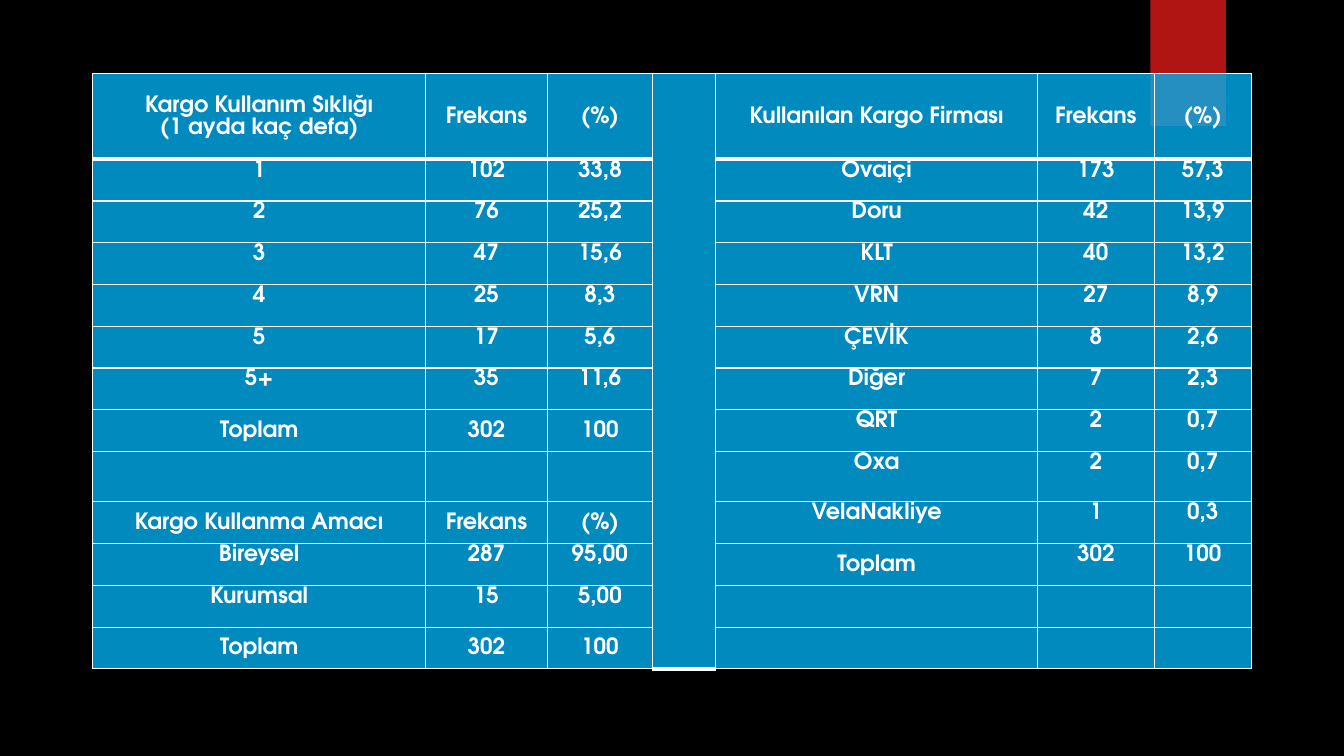
import pptx
import pptx.dml.color
import pptx.enum.shapes
import pptx.enum.text
import pptx.oxml
import pptx.oxml.ns
import pptx.util
from pptx.util import Inches

FONT = "TeX Gyre Adventor"
WHITE = "FFFFFF"
COLUMN_WIDTHS = [3.3, 1.21, 1.04, 0.63, 3.19, 1.16, 0.96]
TABLE_HEIGHT, HEADER_HEIGHT, GAP_HEIGHT = 5.91, 0.85, 0.5
GAP_ROW, GAP_COLUMN = 8, 3
USAGE = [
    ("Kargo Kullanım Sıklığı\n(1 ayda kaç defa)", "Frekans", "(%)"),
    ("1", "102", "33,8"),
    ("2", "76", "25,2"),
    ("3", "47", "15,6"),
    ("4", "25", "8,3"),
    ("5", "17", "5,6"),
    ("5+", "35", "11,6"),
    ("Toplam", "302", "100"),
    ("", "", ""),
    ("Kargo Kullanma Amacı", "Frekans", "(%)"),
    ("Bireysel", "287", "95,00"),
    ("Kurumsal", "15", "5,00"),
    ("Toplam", "302", "100"),
]
COMPANIES = [
    ("Kullanılan Kargo Firması", "Frekans", "(%)"),
    ("Ovaiçi", "173", "57,3"),
    ("Doru", "42", "13,9"),
    ("KLT", "40", "13,2"),
    ("VRN", "27", "8,9"),
    ("ÇEVİK", "8", "2,6"),
    ("Diğer", "7", "2,3"),
    ("QRT", "2", "0,7"),
    ("Oxa", "2", "0,7"),
    ("VelaNakliye", "1", "0,3"),
    ("Toplam", "302", "100"),
    ("", "", ""),
    ("", "", ""),
]
MIDDLE_ROWS_LEFT = {0, 7, 9, 12}


def color(value):
    """Return the colour for a hex string."""
    return pptx.dml.color.RGBColor.from_string(value)


def set_background(slide, value):
    """Fill the slide background with one colour."""
    slide.background.fill.solid()
    slide.background.fill.fore_color.rgb = color(value)


def add_ribbon(slide):
    """Add the red ribbon at the top edge."""
    shape = slide.shapes.add_shape(
        pptx.enum.shapes.MSO_SHAPE.RECTANGLE,
        Inches(11.41), Inches(0), Inches(0.75), Inches(1.25))
    shape.shadow.inherit = False
    shape.fill.solid()
    shape.fill.fore_color.rgb = color("B01513")
    shape.line.fill.background()


def set_borders(cell, bottom_width):
    """Draw white borders around a cell, with its own bottom width."""
    properties = cell._tc.get_or_add_tcPr()
    namespace = pptx.oxml.ns.nsdecls("a")
    widths = {"lnL": 1, "lnR": 1, "lnT": 1, "lnB": bottom_width}
    for position, (side, width) in enumerate(widths.items()):
        properties.insert(position, pptx.oxml.parse_xml(
            f'<a:{side} {namespace} w="{pptx.util.Pt(width)}"><a:solidFill>'
            f'<a:srgbClr val="{WHITE}"/></a:solidFill></a:{side}>'))


def set_fill(cell, value, opacity):
    """Fill a cell with a translucent colour."""
    cell.fill.solid()
    cell.fill.fore_color.rgb = color(value)
    rgb = cell._tc.tcPr.find(".//" + pptx.oxml.ns.qn("a:srgbClr"))
    alpha = pptx.oxml.parse_xml(
        f'<a:alpha {pptx.oxml.ns.nsdecls("a")} val="{opacity * 1000}"/>')
    rgb.append(alpha)


def format_cell(cell, text, middle, bottom_width):
    """Write the text of a cell and style it."""
    set_fill(cell, "00B0F0", 79)
    set_borders(cell, bottom_width)
    cell.margin_left = cell.margin_right = Inches(0.07)
    cell.margin_top = cell.margin_bottom = 0
    anchor = pptx.enum.text.MSO_ANCHOR
    cell.vertical_anchor = anchor.MIDDLE if middle else anchor.TOP
    cell.text = text
    for paragraph in cell.text_frame.paragraphs:
        paragraph.alignment = pptx.enum.text.PP_ALIGN.CENTER
        paragraph.line_spacing = 1.07
        paragraph.font.name = FONT
        paragraph.font.size = pptx.util.Pt(16)
        paragraph.font.bold = True
        paragraph.font.color.rgb = color(WHITE)


def add_survey_table(slide):
    """Add the table that holds the usage and company results."""
    row_count = len(USAGE)
    table = slide.shapes.add_table(
        row_count, len(COLUMN_WIDTHS), Inches(0.92), Inches(0.73),
        Inches(sum(COLUMN_WIDTHS)), Inches(TABLE_HEIGHT)).table
    table.first_row = table.horz_banding = False
    for column, width in zip(table.columns, COLUMN_WIDTHS):
        column.width = Inches(width)
    body_height = (TABLE_HEIGHT - HEADER_HEIGHT - GAP_HEIGHT) / (row_count - 2)
    heights = {0: HEADER_HEIGHT, GAP_ROW: GAP_HEIGHT}
    for row_index, (usage, company) in enumerate(zip(USAGE, COMPANIES)):
        table.rows[row_index].height = Inches(heights.get(row_index, body_height))
        for column_index, text in enumerate((*usage, "", *company)):
            if column_index < GAP_COLUMN:
                middle = row_index in MIDDLE_ROWS_LEFT
            else:
                middle = row_index == 0 or (row_index, text) == (10, "Toplam")
            thick = row_index == 0 or (
                column_index == GAP_COLUMN and row_index == row_count - 1)
            format_cell(table.cell(row_index, column_index), text, middle,
                        3 if thick else 1)
    table.cell(0, GAP_COLUMN).merge(table.cell(row_count - 1, GAP_COLUMN))


def main():
    """Build the slide and save it."""
    presentation = pptx.Presentation()
    presentation.slide_width = Inches(13.33)
    presentation.slide_height = Inches(7.5)
    slide = presentation.slides.add_slide(presentation.slide_layouts[6])
    set_background(slide, "000000")
    add_ribbon(slide)
    add_survey_table(slide)
    presentation.save("out.pptx")


if __name__ == "__main__":
    main()
